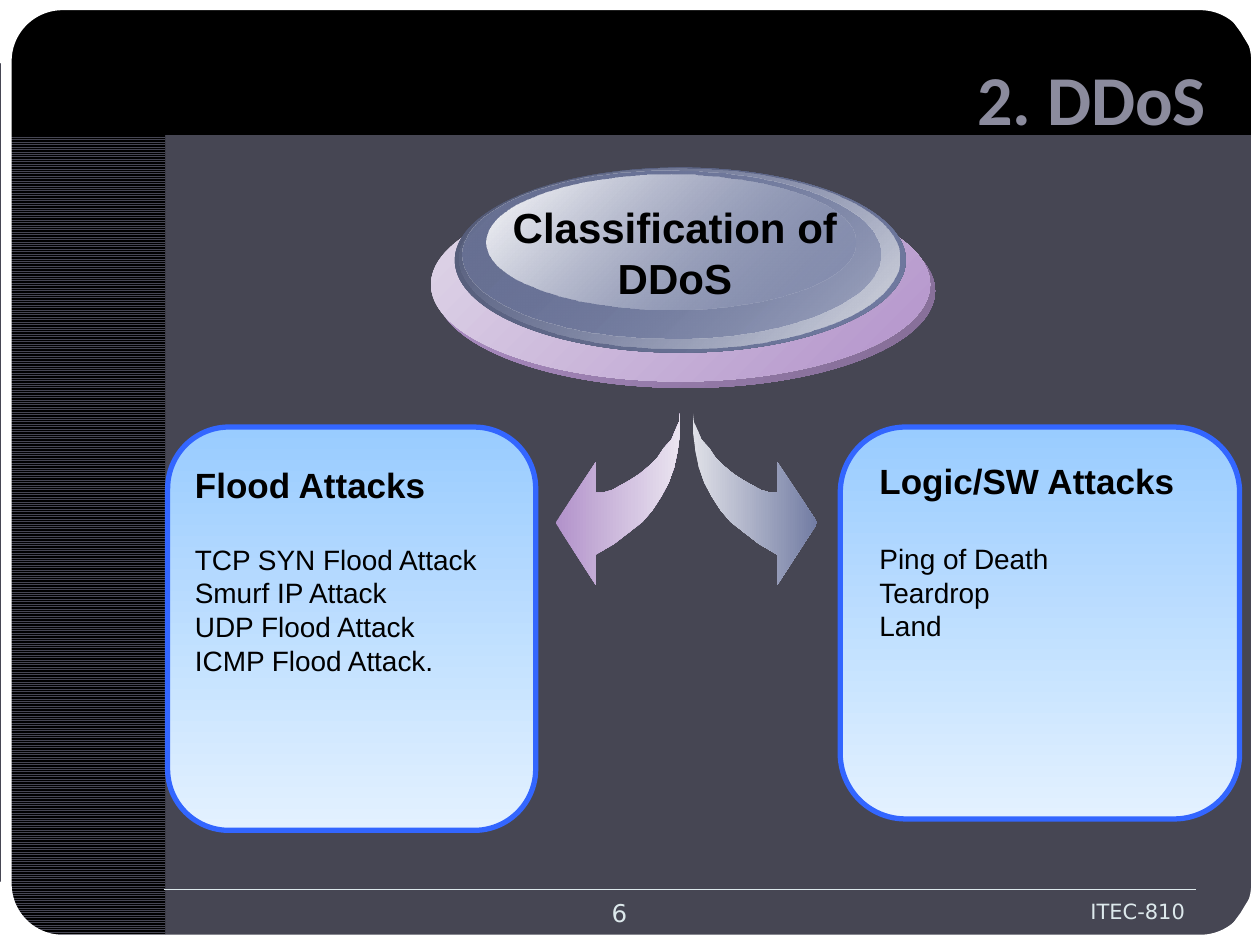
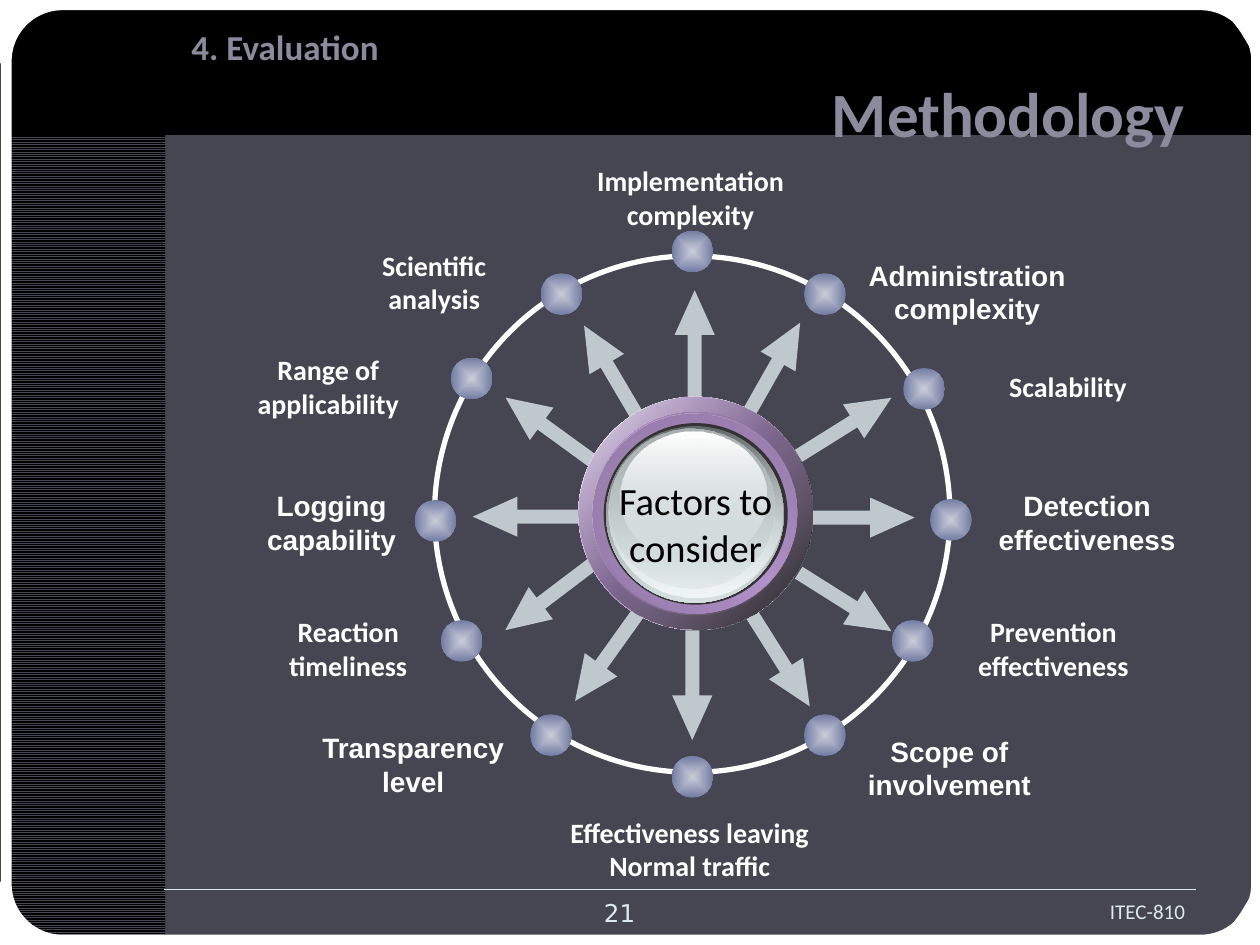
from lxml import etree
from pptx import Presentation
from pptx.dml.color import RGBColor
from pptx.enum import dml, shapes, text
from pptx.oxml import ns, parse_xml
from pptx.util import Cm, Pt

SLATE = RGBColor(0x46, 0x46, 0x53)
BLACK = RGBColor(0x00, 0x00, 0x00)
WHITE = RGBColor(0xFF, 0xFF, 0xFF)
PALE = RGBColor(0xDD, 0xE9, 0xEC)
MAUVE = RGBColor(0x8B, 0x8B, 0x9D)
LILAC = RGBColor(0xB2, 0x92, 0xCA)
MIST = RGBColor(0xEA, 0xE4, 0xF0)
HAZE = RGBColor(0xE1, 0xD8, 0xE9)
PLUM = RGBColor(0x82, 0x6B, 0x94)
GRAPE = RGBColor(0x88, 0x70, 0x9B)
VIOLET = RGBColor(0x92, 0x78, 0xA6)
STEEL = RGBColor(0x72, 0x7C, 0xA3)
NAVY = RGBColor(0x52, 0x59, 0x75)
DUSK = RGBColor(0x67, 0x70, 0x93)
CLOUD = RGBColor(0xDB, 0xDD, 0xE4)
FOG = RGBColor(0xDF, 0xE0, 0xE7)
PEARL = RGBColor(0xCB, 0xCD, 0xD9)
SKY = RGBColor(0x99, 0xCC, 0xFF)
ICE = RGBColor(0xE3, 0xF1, 0xFF)
BLUE = RGBColor(0x33, 0x66, 0xFF)
COAL = RGBColor(0x33, 0x33, 0x33)
IRON = RGBColor(0x63, 0x68, 0x69)
ASH = RGBColor(0xAA, 0xB2, 0xB3)
GLASS = RGBColor(0xD6, 0xE1, 0xE2)
FROST = RGBColor(0xF1, 0xF5, 0xF5)

KIND = shapes.MSO_SHAPE
LEFT, MID, RIGHT = text.PP_ALIGN.LEFT, text.PP_ALIGN.CENTER, text.PP_ALIGN.RIGHT


def write(page, box, words, font="Calibri", size=16, color=WHITE, bold=False,
          align=MID, wrap=True, anchor=text.MSO_ANCHOR.TOP):
    frame = page.shapes.add_textbox(*map(Cm, box)).text_frame
    frame.word_wrap = wrap
    frame.vertical_anchor = anchor
    frame.text = words
    for para in frame.paragraphs:
        para.alignment = align
        para.font.name = font
        para.font.size = Pt(size)
        para.font.bold = bold
        para.font.color.rgb = color
    return frame.paragraphs


def draw(page, kind, box, fill=None, angle=0, line=None, width=1, turn=0, adj=(), alpha=100):
    if kind:
        shape = page.shapes.add_shape(kind, *map(Cm, box))
    else:
        dots = [(Cm(x), Cm(y)) for x, y in box]
        pen = page.shapes.build_freeform(*dots[0])
        pen.add_line_segments(dots[1:])
        shape = pen.convert_to_shape()
    shape.shadow.inherit = False
    shape.rotation = turn
    for i, part in enumerate(adj):
        shape.adjustments[i] = part
    if line is None:
        shape.line.fill.background()
    else:
        shape.line.color.rgb = line
        shape.line.width = Pt(width)
    if fill is None:
        shape.fill.background()
        return shape
    shape.fill.solid()
    if isinstance(fill, RGBColor):
        shape.fill.fore_color.rgb = fill
        if alpha < 100:
            tint = shape._element.spPr.find(".//" + ns.qn("a:srgbClr"))
            etree.SubElement(tint, ns.qn("a:alpha"), val=str(alpha * 1000))
        return shape
    stops = ""
    for i, stop in enumerate(fill):
        color, clear = stop if isinstance(stop[0], RGBColor) else (stop, 100)
        place = 100000 * i // (len(fill) - 1)
        stops += (f'<a:gs pos="{place}"><a:srgbClr val="{color}">'
                  f'<a:alpha val="{clear * 1000}"/></a:srgbClr></a:gs>')
    if angle is None:
        way = ('<a:path path="shape"><a:fillToRect l="50000" t="50000" '
               'r="50000" b="50000"/></a:path>')
    else:
        way = f'<a:lin ang="{angle * 60000}" scaled="0"/>'
    solid = shape._element.spPr.find(ns.qn("a:solidFill"))
    solid.getparent().replace(solid, parse_xml(
        f'<a:gradFill {ns.nsdecls("a")} rotWithShape="1">'
        f'<a:gsLst>{stops}</a:gsLst>{way}</a:gradFill>'))
    return shape


deck = Presentation()
deck.slide_width, deck.slide_height = Cm(25.4), Cm(19.05)
back = deck.slide_master.background.fill
back.solid()
back.fore_color.rgb = SLATE

corner = [(0, 1.27), (0.38, 0.64), (0.74, 0.15), (1.3, 0), (0, 0)]
pages = []
for number, font in (("6", "DejaVu Sans"), ("21", "Calibri")):
    page = deck.slides.add_slide(deck.slide_layouts[6])
    pages.append(page)
    draw(page, KIND.RECTANGLE, (0.13, 0.15, 25.25, 2.57), BLACK)
    hatch = draw(page, KIND.RECTANGLE, (0.03, 2.72, 3.3, 16.36)).fill
    hatch.patterned()
    hatch.pattern = dml.MSO_PATTERN.NARROW_HORIZONTAL
    hatch.fore_color.rgb = SLATE
    hatch.back_color.rgb = BLACK
    draw(page, KIND.ROUNDED_RECTANGLE, (0.13, 0.1, 25.2, 18.85), line=WHITE, width=6, adj=[0.06])
    for right in (0, 25.4):
        for low in (0, 19.05):
            draw(page, None, [(abs(right - x), abs(low - y)) for x, y in corner],
                 WHITE, line=WHITE, width=0.75)
    rule = page.shapes.add_connector(shapes.MSO_CONNECTOR.STRAIGHT,
                                     Cm(3.3), Cm(17.93), Cm(24.1), Cm(17.93))
    rule.line.color.rgb = PALE
    rule.line.width = Pt(0.75)
    etree.SubElement(rule._element.spPr, ns.qn("a:effectLst"))
    write(page, (18.42, 17.98, 5.72, 0.84), "ITEC-810", font, 12, PALE, align=RIGHT)
    write(page, (9.53, 17.98, 5.92, 0.86), number, "DejaVu Sans", 14, PALE)

page = pages[0]
write(page, (3.81, 0.97, 20.75, 1.98), "2. DDoS", size=40, color=MAUVE, bold=True,
      align=RIGHT, anchor=text.MSO_ANCHOR.MIDDLE)

for box, fill in (
    ((8.79, 3.91, 10.06, 3.91), (LILAC, PLUM)),
    ((8.69, 3.78, 10.06, 3.91), (HAZE, LILAC)),
    ((9.17, 3.38, 9.09, 3.73), (NAVY, STEEL)),
    ((9.27, 3.4, 8.86, 3.63), ((STEEL, 0), CLOUD)),
    ((9.32, 3.43, 8.43, 3.4), (DUSK, (STEEL, 48))),
    ((9.8, 3.51, 7.44, 2.74), (WHITE, (STEEL, 38))),
):
    draw(page, KIND.OVAL, box, fill, 45)
write(page, (9.12, 3.94, 8.97, 2.31), "Classification of\nDDoS", "Arial", 24, BLACK,
      bold=True, wrap=False)

for box, area, gap, words in (
    ((3.38, 8.61, 7.42, 8.13), (3.68, 9.22, 6.6, 4.67), 21,
     "Flood Attacks\nTCP SYN Flood Attack\nSmurf IP Attack\nUDP Flood Attack\nICMP Flood Attack."),
    ((16.94, 8.61, 8.05, 7.9), (17.48, 9.14, 7.16, 4.01), 23,
     "Logic/SW Attacks\nPing of Death\nTeardrop\nLand"),
):
    draw(page, KIND.ROUNDED_RECTANGLE, box, (SKY, ICE), 90, BLUE, 3)
    paras = write(page, area, words, "Arial", 16, BLACK, align=LEFT)
    paras[0].font.size = Pt(20)
    paras[0].font.bold = True
    paras[1].space_before = Pt(gap)

curve = [
    (0.13, 8.33), (0.13, 8.71), (0.18, 9.09), (0.25, 9.42), (0.36, 9.73), (0.51, 10.01),
    (0.69, 10.29), (0.89, 10.52), (1.17, 10.74), (1.47, 10.97), (1.83, 11.18), (1.83, 11.79),
    (2.64, 10.54), (1.83, 9.32), (1.83, 9.93), (1.68, 9.93), (1.5, 9.88), (1.32, 9.78),
    (1.14, 9.68), (0.94, 9.55), (0.76, 9.4), (0.58, 9.22), (0.46, 9.04), (0.3, 8.86),
    (0.23, 8.69), (0.15, 8.51),
]
for side, fill in ((-1, (LILAC, MIST)), (1, (FOG, STEEL))):
    draw(page, None, [(13.84 + side * x, y) for x, y in curve], fill)

page = pages[1]
paras = write(page, (3.61, 0.39, 20.52, 2.6), "4. Evaluation\nMethodology", size=20,
              color=MAUVE, bold=True, align=LEFT)
paras[1].alignment = RIGHT
paras[1].font.size = Pt(36)
paras[1].space_before = Pt(4)

draw(page, KIND.OVAL, (8.76, 5.16, 10.39, 10.41), line=WHITE, width=3)
for words, font, area, dot, arrow, turn in (
    ("Implementation\ncomplexity", "Calibri", (11.76, 3.18, 4.32), (13.54, 4.65), (12.9, 6.55), 270),
    ("Administration\ncomplexity", "Arial", (17.22, 5.08, 4.55), (16.21, 5.51), (14.48, 7.06), 299.6),
    ("Scalability", "Calibri", (20.07, 7.32, 2.92), (18.21, 7.42), (15.93, 8.2), 328),
    ("Detection\neffectiveness", "Arial", (19.86, 9.73, 4.11), (18.75, 10.06), (16.23, 10.03), 0),
    ("Prevention\neffectiveness", "Calibri", (19.43, 12.27, 3.61), (17.98, 12.5), (15.93, 11.73), 32.2),
    ("Scope of\ninvolvement", "Arial", (17.22, 14.68, 3.84), (16.21, 14.4), (14.63, 12.9), 57.8),
    ("Effectiveness leaving\nNormal traffic", "Calibri", (11.2, 16.31, 5.41), (13.54, 15.24), (12.85, 13.41), 90),
    ("Transparency\nlevel", "Arial", (6.22, 14.61, 4.22), (10.69, 14.4), (11.13, 12.83), 125.6),
    ("Reaction\ntimeliness", "Calibri", (5.56, 12.27, 2.92), (8.89, 12.5), (9.96, 11.63), 142.8),
    ("Logging\ncapability", "Arial", (5.11, 9.73, 3.15), (8.36, 10.08), (9.53, 10.01), 180),
    ("Range of\napplicability", "Calibri", (4.93, 6.99, 3.38), (9.09, 7.21), (9.98, 8.26), 216),
    ("Scientific\nanalysis", "Calibri", (7.37, 4.88, 2.77), (10.9, 5.51), (11.23, 7.11), 239.5),
):
    draw(page, KIND.RIGHT_ARROW, (*arrow, 2.21, 0.81), PALE, turn=turn, adj=[0.35, 1.11], alpha=80)
    draw(page, KIND.OVAL, (*dot, 0.84, 0.84), (PEARL, STEEL), None)
    tall = 0.25 + 0.69 * len(words.split("\n"))
    write(page, (*area, tall), words, font, bold=True, wrap=False)

for box, fill, angle in (
    ((11.66, 8, 4.72, 4.7), (WHITE, LILAC, WHITE), 45),
    ((11.66, 8, 4.72, 4.7), ((LILAC, 32), (BLACK, 90)), 45),
    ((11.96, 8.31, 4.11, 4.06), (GRAPE, LILAC, GRAPE), 315),
    ((11.94, 8.33, 4.11, 4.06), (VIOLET, (LILAC, 0)), 45),
    ((12.17, 8.53, 3.71, 3.66), COAL, 0),
    ((12.22, 8.59, 3.58, 3.56), (IRON, GLASS), 90),
    ((12.27, 8.59, 3.51, 3.45), ((GLASS, 0), FROST), 90),
    ((12.29, 8.64, 3.33, 3.23), (ASH, (GLASS, 48)), 90),
    ((12.5, 8.71, 2.95, 2.62), (WHITE, (GLASS, 38)), 90),
):
    draw(page, KIND.OVAL, box, fill, angle)
write(page, (12.12, 9.5, 3.81, 2.13), "Factors to\nconsider", size=22, color=BLACK, wrap=False)

deck.save("out.pptx")
